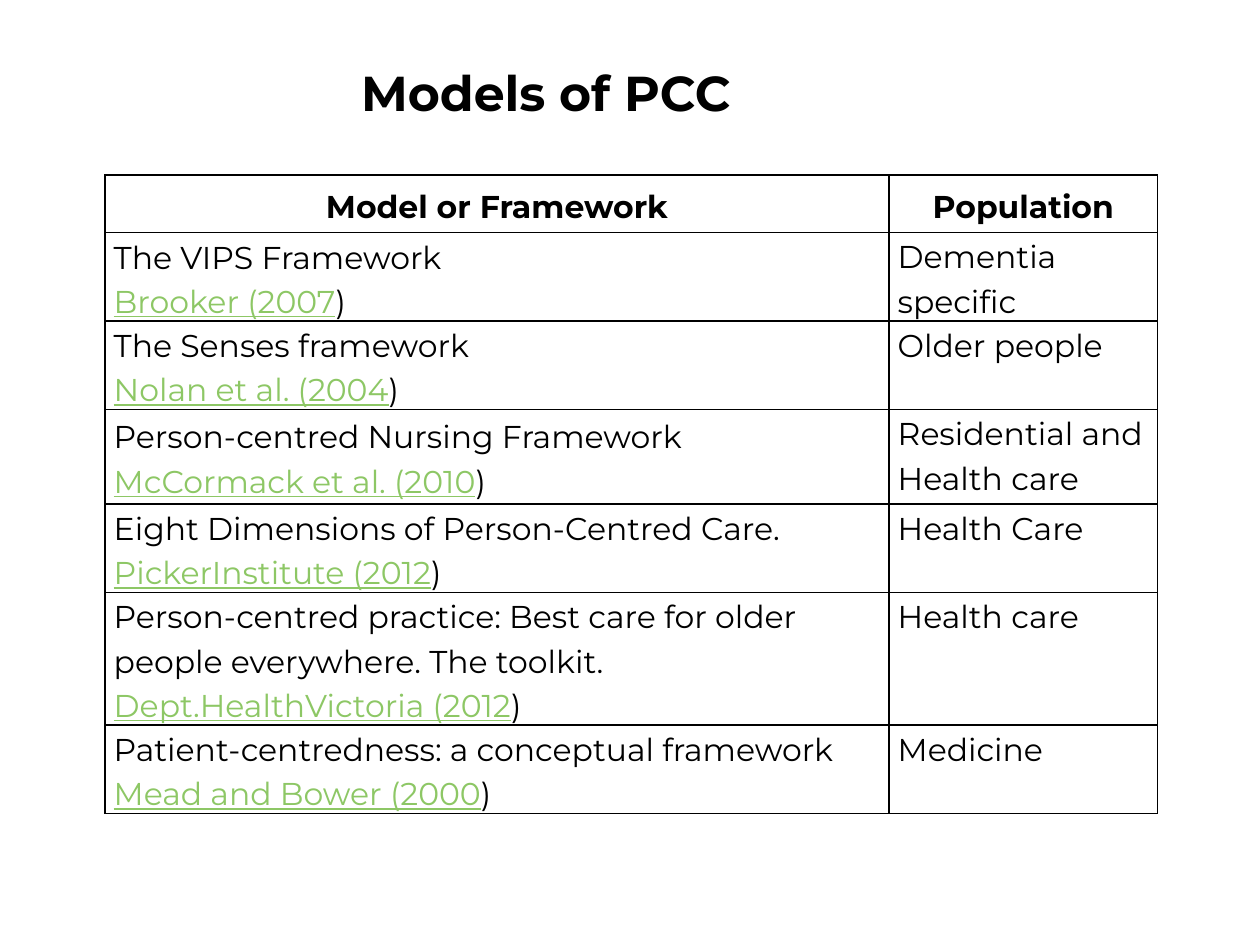
from lxml.etree import SubElement
from pptx import Presentation
from pptx.dml.color import RGBColor as Rgb
from pptx.enum.text import MSO_ANCHOR as Anchor, PP_ALIGN as Align
from pptx.oxml.ns import qn
from pptx.util import Pt

# Content: each paragraph is a list of (text, is link)
TITLE = "Models of PCC"
HEADS = ["Model or Framework", "Population"]


def cite(name):
    return [(name, True), (")", False)]


def plain(text):
    return [(text, False)]


ROWS = [
    ([plain("The VIPS Framework"), cite("Brooker (2007")],
     [plain("Dementia specific")]),
    ([plain("The Senses framework"), cite("Nolan et al. (2004")],
     [plain("Older people")]),
    ([plain("Person-centred Nursing Framework"), cite("McCormack et al. (2010")],
     [plain("Residential and"), plain("Health care")]),
    ([plain("Eight Dimensions of Person-Centred Care."), cite("PickerInstitute (2012")],
     [plain("Health Care")]),
    ([plain("Person-centred practice: Best care for older people everywhere. "
            "The toolkit. ") + cite("Dept.HealthVictoria (2012")],
     [plain("Health care")]),
    ([plain("Patient-centredness: a conceptual framework"), cite("Mead and Bower (2000")],
     [plain("Medicine")]),
]


# Theme and layout, in points
class Theme:
    font = "Montserrat"
    ink = Rgb(0x00, 0x00, 0x00)
    link = Rgb(0x8D, 0xC7, 0x65)
    title, body = 28, 18
    line = 1


LEFT, TOP = 60, 100
COLS = [448, 153.5]
HIGHS = [33, 49, 49, 54, 49, 52, 49]


def style(font, size, bold=False):
    font.name, font.size, font.bold = Theme.font, Pt(size), bold
    font.color.rgb = Theme.ink


def border(cell):
    props = cell._tc.get_or_add_tcPr()
    for i, side in enumerate(("lnL", "lnR", "lnT", "lnB")):
        line = props.makeelement(qn(f"a:{side}"), {"w": str(Pt(Theme.line))})
        fill = SubElement(line, qn("a:solidFill"))
        SubElement(fill, qn("a:srgbClr"), val=str(Theme.ink))
        props.insert(i, line)


def write(cell, paras, anchor, align=Align.LEFT, bold=False):
    cell.fill.background()
    border(cell)
    cell.vertical_anchor = anchor
    cell.margin_left = cell.margin_right = Pt(5)
    cell.margin_top = cell.margin_bottom = 0
    frame = cell.text_frame
    for i, runs in enumerate(paras):
        para = frame.add_paragraph() if i else frame.paragraphs[0]
        para.alignment, para.line_spacing = align, 1.15
        style(para.font, Theme.body, bold)
        for text, link in runs:
            run = para.add_run()
            run.text = text
            style(run.font, Theme.body, bold)
            if link:
                run.font.color.rgb = Theme.link
                run.font.underline = True


def main():
    deck = Presentation()
    deck.slide_width, deck.slide_height = Pt(720), Pt(540)
    slide = deck.slides.add_slide(deck.slide_layouts[5])

    # Title
    title = slide.shapes.title
    title.left, title.top, title.width, title.height = Pt(20), Pt(21), Pt(584), Pt(63)
    title.text = TITLE
    title.text_frame.vertical_anchor = Anchor.MIDDLE
    para = title.text_frame.paragraphs[0]
    para.alignment = Align.CENTER
    style(para.font, Theme.title, True)

    # Table
    table = slide.shapes.add_table(len(HIGHS), len(COLS), Pt(LEFT), Pt(TOP),
                                   Pt(sum(COLS)), Pt(sum(HIGHS))).table
    table.horz_banding = False
    for col, wide in zip(table.columns, COLS):
        col.width = Pt(wide)
    for row, high in zip(table.rows, HIGHS):
        row.height = Pt(high)
    for c, head in enumerate(HEADS):
        write(table.cell(0, c), [plain(head)], Anchor.MIDDLE, Align.CENTER, True)
    for r, (model, group) in enumerate(ROWS, 1):
        write(table.cell(r, 0), model, Anchor.MIDDLE)
        write(table.cell(r, 1), group, Anchor.TOP)

    deck.save("out.pptx")


if __name__ == "__main__":
    main()
